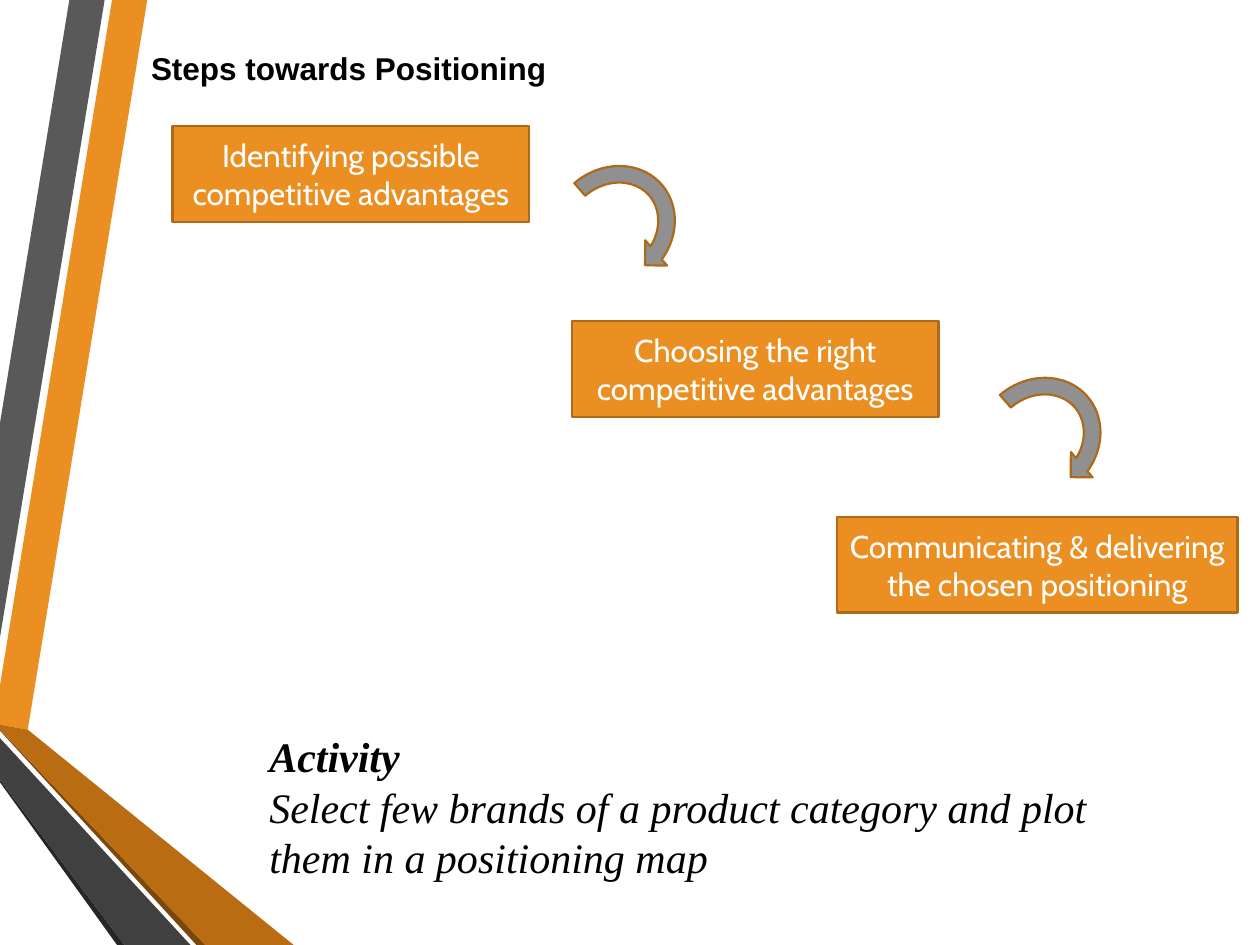
from pptx import Presentation
from pptx.dml.color import RGBColor
from pptx.enum.shapes import MSO_SHAPE
from pptx.enum.text import MSO_ANCHOR, PP_ALIGN
from pptx.util import Cm, Pt


def paint(sp, fill, line=None):
    sp.shadow.inherit = False
    sp.fill.solid()
    sp.fill.fore_color.rgb = RGBColor.from_string(fill)
    if line:
        sp.line.color.rgb = RGBColor.from_string(line)
        sp.line.width = Pt(1.25)
    else:
        sp.line.fill.background()


def style(p, name, size, color, bold=False, italic=False, align=PP_ALIGN.LEFT):
    p.alignment = align
    f = p.font
    f.name, f.size, f.bold, f.italic = name, Pt(size), bold, italic
    f.color.rgb = RGBColor.from_string(color)


prs = Presentation()
prs.slide_width, prs.slide_height = Cm(25.4), Cm(19.05)
s = prs.slides.add_slide(prs.slide_layouts[5])

# Folded ribbons along the left edge
ribbons = [
    ("EB8F22", [(0, 13.82), (0, 14.61), (0.56, 14.71), (2.97, 0), (2.26, 0)]),
    ("595959", [(2.11, 0), (1.4, 0), (0, 8.53), (0, 12.85)]),
    ("262626", [(0, 15.72), (0, 15.77), (2.36, 19.05), (2.51, 19.05)]),
    ("7B480B", [(0, 14.71), (0, 14.73), (3.96, 19.05), (4.14, 19.05)]),
    ("B96C11", [(0, 14.71), (4.14, 19.05), (5.92, 19.05), (0.56, 14.71), (0, 14.61)]),
    ("404040", [(0, 15.72), (2.51, 19.05), (3.84, 19.05), (0, 14.88)]),
]
for color, points in ribbons:
    start, *rest = [(Cm(x), Cm(y)) for x, y in points]
    fb = s.shapes.build_freeform(*start)
    fb.add_line_segments(rest, close=True)
    paint(fb.convert_to_shape(), color)

# Title
title = s.shapes.title
title.left, title.top, title.width, title.height = Cm(2.79), Cm(0.86), Cm(8.74), Cm(2.24)
tf = title.text_frame
tf.text = "Steps towards Positioning"
tf.word_wrap = False
tf.vertical_anchor = MSO_ANCHOR.TOP
style(tf.paragraphs[0], "Arial", 18, "000000", bold=True)

# Steps, descending evenly to the right
steps = [
    (3.48, 7.19, "Identifying possible competitive advantages"),
    (11.53, 7.39, "Choosing the right competitive advantages"),
    (16.87, 8.08, "Communicating & delivering the chosen positioning"),
]
for i, (left, width, text) in enumerate(steps):
    sp = s.shapes.add_shape(MSO_SHAPE.RECTANGLE, Cm(left), Cm(2.54 + 3.94 * i), Cm(width), Cm(1.93))
    paint(sp, "EB8F22", "AE6A19")
    tf = sp.text_frame
    tf.text = text
    tf.word_wrap = True
    tf.vertical_anchor = MSO_ANCHOR.MIDDLE
    style(tf.paragraphs[0], "Cabin", 18, "FFFFFF", align=PP_ALIGN.CENTER)

# Curved arrows between the steps
for left, top in [(11, 3.1), (19.58, 7.37)]:
    sp = s.shapes.add_shape(MSO_SHAPE.CIRCULAR_ARROW, Cm(left), Cm(top), Cm(2.69), Cm(2.97))
    sp.rotation = 49.3
    paint(sp, "909090", "AE6A19")

# Activity
tf = s.shapes.add_textbox(Cm(5.18), Cm(14.61), Cm(18.34), Cm(3.33)).text_frame
tf.word_wrap = True
tf.text = "Activity\nSelect few brands of a product category and plot them in a positioning map"
heading, task = tf.paragraphs
style(heading, "Times New Roman", 24, "000000", bold=True, italic=True, align=PP_ALIGN.JUSTIFY)
style(task, "Times New Roman", 24, "000000", italic=True)

prs.save("out.pptx")
